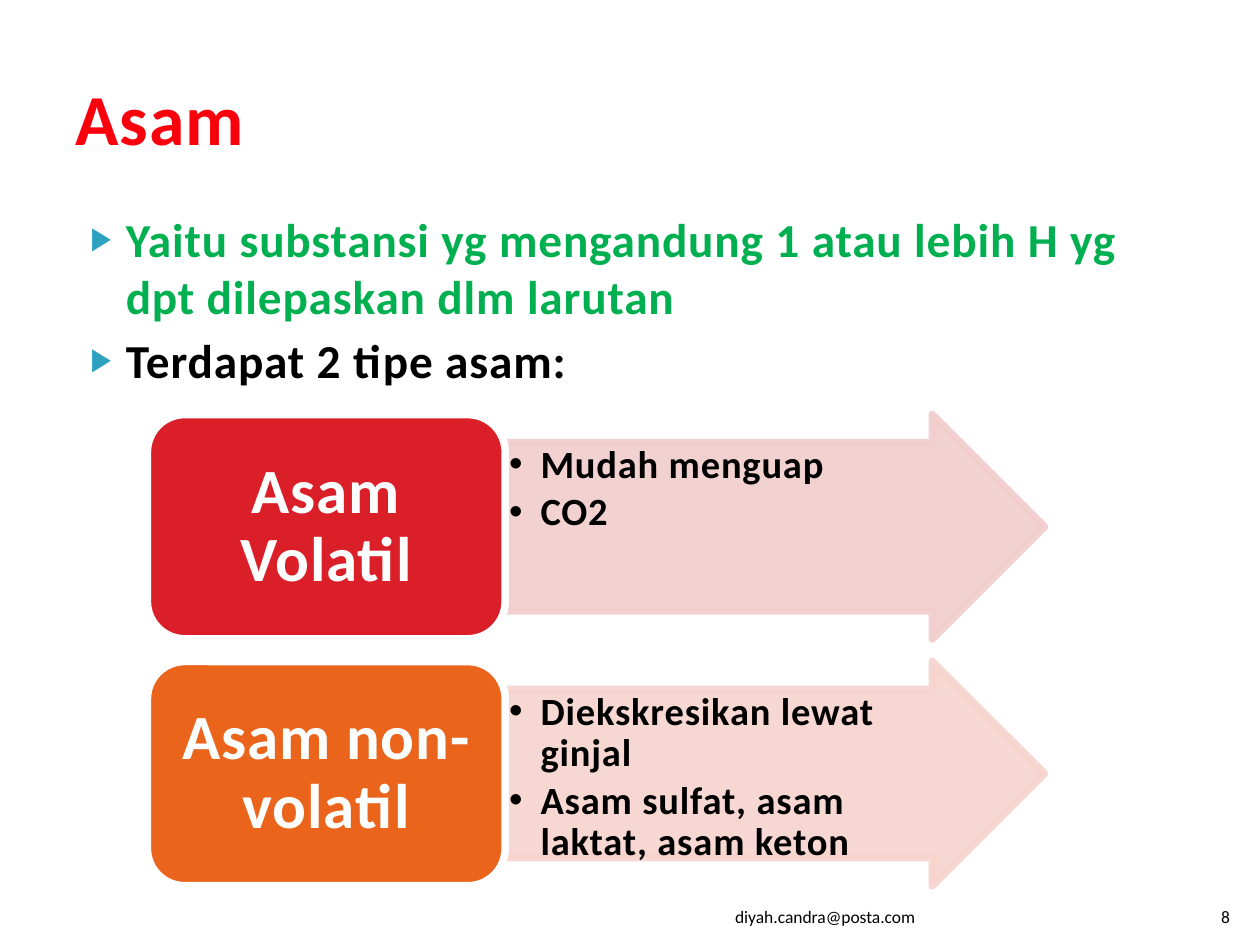
"""Build the slide on acids and their two types."""
from pptx import Presentation
from pptx.dml.color import RGBColor
from pptx.enum.shapes import MSO_SHAPE
from pptx.enum.text import MSO_ANCHOR, PP_ALIGN
from pptx.oxml.ns import qn
from pptx.util import Inches, Pt
from lxml.etree import SubElement


def rgb(color):
    """Turn a hex string into a colour."""
    return RGBColor.from_string(color)


def write(tf, lines, size, colors, bold=True, bullet=None, indent=(0, 0), anchor=MSO_ANCHOR.TOP,
          margins=(0.1, 0.05, 0.1, 0.05), before=0, **para):
    """Fill a text frame with equally formatted paragraphs."""
    tf.word_wrap = True
    tf.vertical_anchor = anchor
    for side, margin in zip(("left", "top", "right", "bottom"), margins):
        setattr(tf, f"margin_{side}", Inches(margin))
    for i, (line, color) in enumerate(zip(lines, colors)):
        p = tf.paragraphs[0] if i == 0 else tf.add_paragraph()
        for name, value in para.items():
            setattr(p, name, value)
        if i and before:
            p.space_before = Pt(before)
        if bullet:
            char, bullet_color = bullet
            pPr = p._p.get_or_add_pPr()
            pPr.set("marL", str(Inches(indent[0])))
            pPr.set("indent", str(Inches(indent[1])))
            if bullet_color:
                clr = SubElement(pPr, qn("a:buClr"))
                SubElement(clr, qn("a:srgbClr"), val=bullet_color)
                SubElement(pPr, qn("a:buSzPct"), val="68000")
            SubElement(pPr, qn("a:buFont"), typeface="Arial")
            SubElement(pPr, qn("a:buChar"), char=char)
        r = p.add_run()
        r.text = line
        for name, value in {"name": "Calibri", "size": Pt(size), "bold": bold}.items():
            setattr(r.font, name, value)
        r.font.color.rgb = rgb(color)
        if bold:
            r._r.get_or_add_rPr().set("spc", "50")


prs = Presentation()
prs.slide_width, prs.slide_height = Inches(10), Inches(7.5)
s = prs.slides.add_slide(prs.slide_layouts[5])

title = s.shapes.title
title.left, title.top, title.width, title.height = map(Inches, (0.5, 0.3, 9, 1.25))
write(title.text_frame, ["Asam"], 41, ["F9000C"], anchor=MSO_ANCHOR.MIDDLE,
      alignment=PP_ALIGN.LEFT)

body = s.shapes.add_textbox(Inches(0.5), Inches(1.62), Inches(9), Inches(1.6))
write(body.text_frame,
      ["Yaitu substansi yg mengandung 1 atau lebih H yg dpt dilepaskan dlm larutan",
       "Terdapat 2 tipe asam:"],
      27, ["00B050", "000000"], bullet=("▶", "2DA2BF"), indent=(0.4, -0.28), before=4)

acids = [
    ("Asam Volatil", "DA1F28", "F1CDCD", ["Mudah menguap", "CO2"]),
    ("Asam non-volatil", "EB641B", "F7D3CD",
     ["Diekskresikan lewat ginjal", "Asam sulfat, asam laktat, asam keton"]),
]
for row, (name, color, tint, traits) in enumerate(acids):
    top = Inches(3.29 + 1.96 * row)
    arrow = s.shapes.add_shape(MSO_SHAPE.RIGHT_ARROW, Inches(4.02), top, Inches(4.27), Inches(1.78))
    arrow.adjustments[0] = 0.75
    box = s.shapes.add_shape(MSO_SHAPE.ROUNDED_RECTANGLE, Inches(1.17), top, Inches(2.84), Inches(1.78))
    for sp, fill, line in ((arrow, tint, tint), (box, color, "FFFFFF")):
        sp.shadow.inherit = False
        sp.fill.solid()
        sp.fill.fore_color.rgb = rgb(fill)
        sp.line.color.rgb = rgb(line)
        sp.line.width = Pt(4.33)
    for clr in arrow._element.iter(qn("a:srgbClr")):
        SubElement(clr, qn("a:alpha"), val="90000")
    write(arrow.text_frame, traits, 22, ["000000"] * len(traits), bullet=("•", None),
          indent=(0.25, -0.25), margins=(0.02, 0.02, 0.47, 0.02),
          alignment=PP_ALIGN.LEFT, line_spacing=0.9, space_after=Pt(3.3))
    write(box.text_frame, [name], 36, ["FCFDFD"], anchor=MSO_ANCHOR.MIDDLE,
          margins=(0.15, 0.07, 0.15, 0.07), alignment=PP_ALIGN.CENTER, line_spacing=0.9)

for text, left, width in (("diyah.candra@posta.com", 4.79, 2.57), ("8", 9.46, 0.4)):
    footer = s.shapes.add_textbox(Inches(left), Inches(7.01), Inches(width), Inches(0.4))
    write(footer.text_frame, [text], 10, ["000000"], bold=False, anchor=MSO_ANCHOR.BOTTOM,
          alignment=PP_ALIGN.RIGHT)

prs.save("out.pptx")
